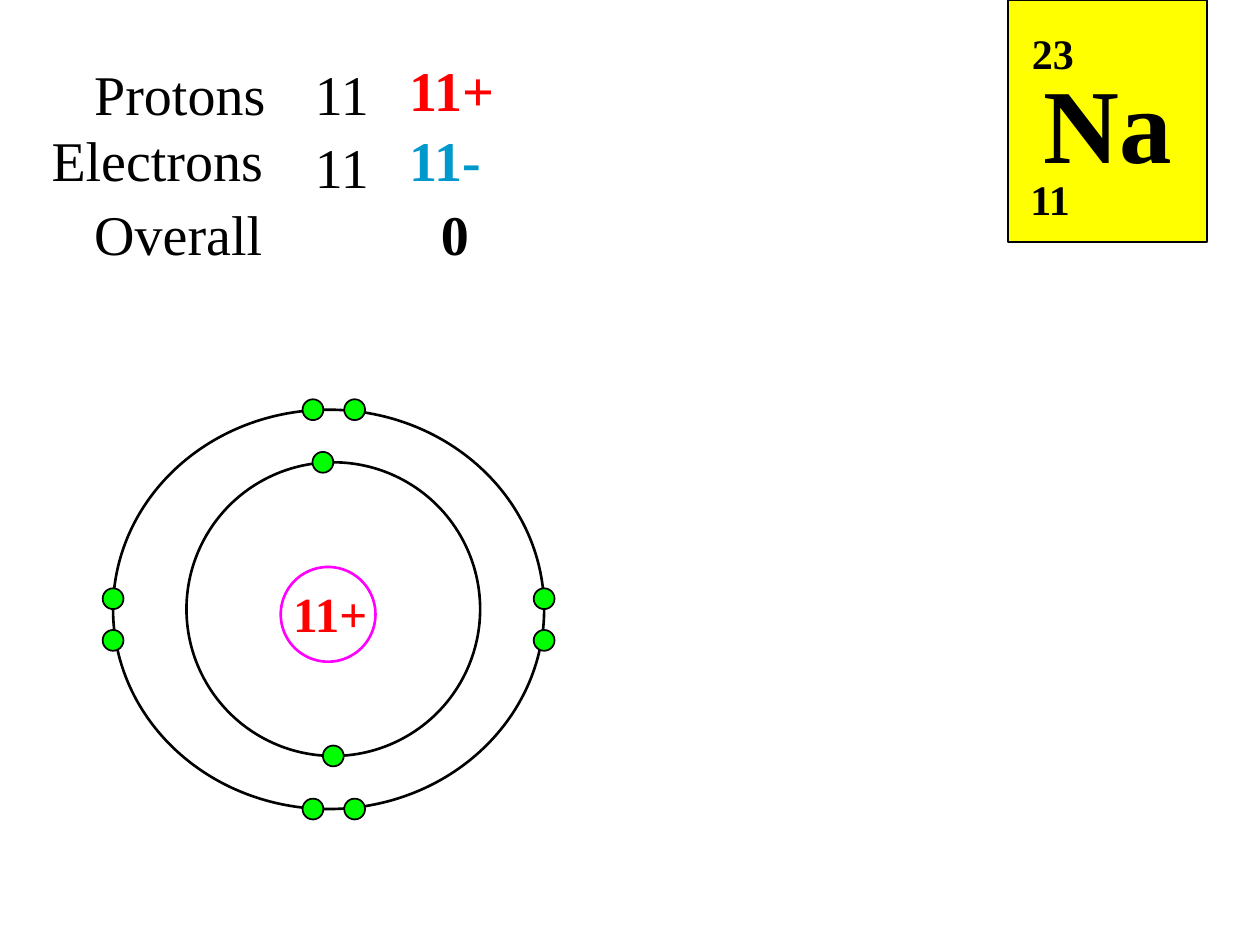
from dataclasses import dataclass
from itertools import product
from typing import Optional

from pptx import Presentation
from pptx.dml.color import RGBColor
from pptx.enum.shapes import MSO_SHAPE
from pptx.enum.text import MSO_ANCHOR, PP_ALIGN
from pptx.shapes.autoshape import Shape
from pptx.shapes.shapetree import GroupShapes
from pptx.text.text import TextFrame
from pptx.util import Cm, Pt

BLACK = RGBColor(0x00, 0x00, 0x00)
RED = RGBColor(0xFF, 0x00, 0x00)
BLUE = RGBColor(0x00, 0x99, 0xCC)
YELLOW = RGBColor(0xFF, 0xFF, 0x00)
GREEN = RGBColor(0x00, 0xFF, 0x00)
MAGENTA = RGBColor(0xFF, 0x00, 0xFF)
FONT = "Times New Roman"
ELECTRON_SIZE = 0.42


@dataclass(frozen=True)
class Box:
    left: float
    top: float
    width: float
    height: float

    @property
    def right(self) -> float:
        return self.left + self.width

    @property
    def bottom(self) -> float:
        return self.top + self.height

    def lengths(self) -> tuple[Cm, Cm, Cm, Cm]:
        return Cm(self.left), Cm(self.top), Cm(self.width), Cm(self.height)


@dataclass(frozen=True)
class Label:
    text: str
    box: Box
    size: int = 32
    color: RGBColor = BLACK
    bold: bool = False


TILE = Box(20.32, 0, 4.01, 4.88)
NUCLEUS = Box(5.66, 11.43, 1.91, 1.91)
INNER_SHELL = Box(3.76, 9.32, 5.92, 5.92)
OUTER_SHELL = Box(2.28, 8.26, 8.69, 8.05)

ELECTRONS = [
    (6.72, INNER_SHELL.bottom),
    (6.51, INNER_SHELL.top),
    *product((6.31, 7.15), (OUTER_SHELL.top, OUTER_SHELL.bottom)),
    *product((OUTER_SHELL.left, OUTER_SHELL.right), (12.07, 12.91)),
]

TILE_LABELS = [
    Label("23", Box(20.55, 0.43, 1.68, 1.27), 24, bold=True),
    Label("11", Box(20.52, 3.38, 1.88, 1.27), 24, bold=True),
]

ATOM_LABELS = [
    Label("11+", Box(5.66, 11.63, 2.11, 1.45), 28, RED, True),
    Label("Protons", Box(1.65, 1.07, 4.65, 1.6)),
    Label("11", Box(6.1, 1.07, 2.11, 1.6)),
    Label("11+", Box(8, 0.99, 2.74, 1.6), color=RED, bold=True),
    Label("Electrons", Box(0.79, 2.41, 5.08, 1.6)),
    Label("11", Box(6.1, 2.54, 2.11, 1.6)),
    Label("11-", Box(8, 2.41, 2.11, 1.6), color=BLUE, bold=True),
    Label("Overall", Box(1.65, 3.89, 5.08, 1.6)),
    Label("0", Box(8.64, 3.89, 2.11, 1.6), bold=True),
]


def write(tf: TextFrame, text: str, size: int, color: RGBColor, bold: bool) -> None:
    tf.text = text
    font = tf.paragraphs[0].runs[0].font
    font.name = FONT
    font.size = Pt(size)
    font.bold = bold
    font.color.rgb = color


def add_label(shapes: GroupShapes, label: Label) -> None:
    tf = shapes.add_textbox(*label.box.lengths()).text_frame
    tf.word_wrap = True
    write(tf, label.text, label.size, label.color, label.bold)


def add_outline(shapes: GroupShapes, kind: MSO_SHAPE, box: Box, line: RGBColor,
                weight: float, fill: Optional[RGBColor] = None) -> Shape:
    s = shapes.add_shape(kind, *box.lengths())
    s.shadow.inherit = False
    s.line.color.rgb = line
    s.line.width = Pt(weight)
    if fill is None:
        s.fill.background()
    else:
        s.fill.solid()
        s.fill.fore_color.rgb = fill
    return s


def add_electron(shapes: GroupShapes, x: float, y: float) -> None:
    half = ELECTRON_SIZE / 2
    box = Box(x - half, y - half, ELECTRON_SIZE, ELECTRON_SIZE)
    add_outline(shapes, MSO_SHAPE.OVAL, box, BLACK, 1, GREEN)


def add_element_tile(shapes: GroupShapes) -> None:
    s = add_outline(shapes, MSO_SHAPE.RECTANGLE, TILE, BLACK, 1, YELLOW)
    tf = s.text_frame
    tf.word_wrap = False
    tf.vertical_anchor = MSO_ANCHOR.MIDDLE
    write(tf, "Na", 60, BLACK, True)
    tf.paragraphs[0].alignment = PP_ALIGN.CENTER
    for label in TILE_LABELS:
        add_label(shapes, label)


def add_atom(shapes: GroupShapes) -> None:
    for box, color in ((NUCLEUS, MAGENTA), (INNER_SHELL, BLACK), (OUTER_SHELL, BLACK)):
        add_outline(shapes, MSO_SHAPE.OVAL, box, color, 1.5)
    for x, y in ELECTRONS:
        add_electron(shapes, x, y)
    for label in ATOM_LABELS:
        add_label(shapes, label)


def main() -> None:
    prs = Presentation()
    prs.slide_width, prs.slide_height = Cm(25.4), Cm(19.05)
    slide = prs.slides.add_slide(prs.slide_layouts[6])
    add_element_tile(slide.shapes.add_group_shape().shapes)
    add_atom(slide.shapes.add_group_shape().shapes)
    prs.save("out.pptx")


if __name__ == "__main__":
    main()
